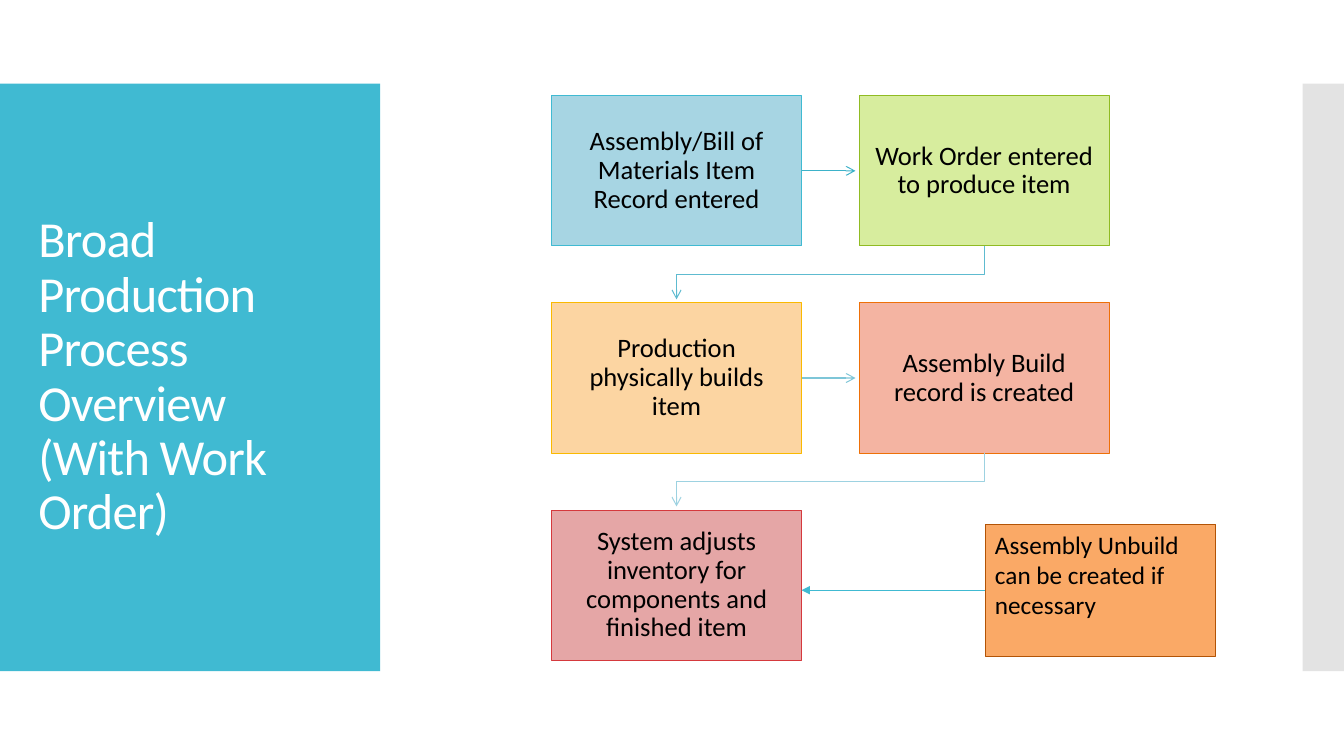
from lxml import etree
from pptx import Presentation
from pptx.dml.color import RGBColor
from pptx.enum.shapes import MSO_CONNECTOR, MSO_SHAPE
from pptx.enum.text import MSO_ANCHOR, PP_ALIGN
from pptx.oxml.ns import qn
from pptx.util import Inches, Pt

RECT = MSO_SHAPE.RECTANGLE
STRAIGHT = MSO_CONNECTOR.STRAIGHT
TOP, MIDDLE = MSO_ANCHOR.TOP, MSO_ANCHOR.MIDDLE
LEFT, CENTER = PP_ALIGN.LEFT, PP_ALIGN.CENTER
FONT = "Calibri"
TEAL = "40BAD2"

BOX_W, BOX_H = 2.48, 1.49
STEP_X, STEP_Y = 3.05, 2.055
ARROW_GAP = 0.035

# Text, fill, outline, colour of the arrow to the next step
STEPS = [
    ("Assembly/Bill of Materials Item Record entered", "A7D5E3", TEAL, "3DB2C9"),
    ("Work Order entered to produce item", "D7ED9E", "90BB23", "5EBBD0"),
    ("Production physically builds item", "FCD5A2", "FAB900", "7EC6D8"),
    ("Assembly Build record is created", "F4B4A2", "EE7008", "9DD2E1"),
    ("System adjusts inventory for components and finished item",
     "E5A6A6", "D5393D", None),
]


def rgb(value):
    return RGBColor.from_string(value)


def add_rect(s, x, y, w, h, fill, line=None):
    shape = s.shapes.add_shape(RECT, Inches(x), Inches(y), Inches(w), Inches(h))
    shape.shadow.inherit = False
    shape.fill.solid()
    shape.fill.fore_color.rgb = rgb(fill)
    if line:
        shape.line.color.rgb = rgb(line)
        shape.line.width = Pt(0.75)
    else:
        shape.line.fill.background()
    return shape


def set_text(shape, text, size, color, align, anchor, spacing=1.0):
    tf = shape.text_frame
    tf.word_wrap = True
    tf.vertical_anchor = anchor
    p = tf.paragraphs[0]
    p.text = text
    p.alignment = align
    p.line_spacing = spacing
    p.font.name = FONT
    p.font.size = Pt(size)
    p.font.color.rgb = rgb(color)
    return tf


def style_arrow(shape, color, head):
    shape.line.color.rgb = rgb(color)
    shape.line.width = Pt(0.75)
    etree.SubElement(shape.line._get_or_add_ln(), qn("a:tailEnd"), type=head)
    sp_pr = shape._element.spPr
    if sp_pr.find(qn("a:effectLst")) is None:
        etree.SubElement(sp_pr, qn("a:effectLst"))


def add_straight_arrow(s, x1, x2, y, color, head):
    line = s.shapes.add_connector(STRAIGHT, Inches(x1), Inches(y), Inches(x2), Inches(y))
    style_arrow(line, color, head)


def add_elbow_arrow(s, x1, y1, x2, y2, color):
    mid = y1 + (STEP_Y - BOX_H) / 2
    points = [(x1, mid), (x2, mid), (x2, y2)]
    builder = s.shapes.build_freeform(Inches(x1), Inches(y1))
    builder.add_line_segments([(Inches(x), Inches(y)) for x, y in points], close=False)
    elbow = builder.convert_to_shape()
    elbow.fill.background()
    elbow.shadow.inherit = False
    style_arrow(elbow, color, "arrow")


def add_title_panel(s, x, y, w, h):
    panel = add_rect(s, x, y, w, h, TEAL)
    title = s.shapes.title
    title._element.addprevious(panel._element)
    title.left, title.top = Inches(x + 0.28), Inches(y + 0.4)
    title.width, title.height = Inches(w - 0.55), Inches(h - 0.8)
    tf = set_text(title, "Broad Production Process Overview (With Work Order)",
                  36, "FFFFFF", LEFT, MIDDLE, 0.9)
    tf.paragraphs[0].runs[0].font._element.set("spc", "-60")


def add_side_bar(s, x, y, w, h):
    add_rect(s, x, y, w, h, "E3E3E3")


def add_flow(s, left, top):
    for i, (text, fill, line, arrow) in enumerate(STEPS):
        row, col = divmod(i, 2)
        x, y = left + col * STEP_X, top + row * STEP_Y
        box = add_rect(s, x, y, BOX_W, BOX_H, fill, line)
        tf = set_text(box, text, 19, "000000", CENTER, MIDDLE, 0.9)
        tf.margin_left = tf.margin_right = Inches(0.15)
        tf.margin_top = tf.margin_bottom = Inches(0.15)
        if not arrow:
            continue
        if col == 0:
            add_straight_arrow(s, x + BOX_W, x + STEP_X - ARROW_GAP,
                               y + BOX_H / 2, arrow, "arrow")
        else:
            add_elbow_arrow(s, x + BOX_W / 2, y + BOX_H, left + BOX_W / 2,
                            y + STEP_Y - ARROW_GAP, arrow)


def add_unbuild_note(s, x, y, w, h, target_x):
    note = add_rect(s, x, y, w, h, "FAA966", "B35406")
    set_text(note, "Assembly Unbuild can be created if necessary",
             18, "000000", LEFT, TOP)
    add_straight_arrow(s, x, target_x, y + h / 2, TEAL, "triangle")


def main():
    prs = Presentation()
    prs.slide_width, prs.slide_height = Inches(13.33), Inches(7.5)
    s = prs.slides.add_slide(prs.slide_layouts[5])
    add_title_panel(s, 0, 0.83, 3.77, 5.83)
    add_side_bar(s, 12.92, 0.83, 0.41, 5.83)
    add_flow(s, 5.47, 0.95)
    add_unbuild_note(s, 9.77, 5.2, 2.29, 1.31, 5.47 + BOX_W)
    prs.save("out.pptx")


if __name__ == "__main__":
    main()
